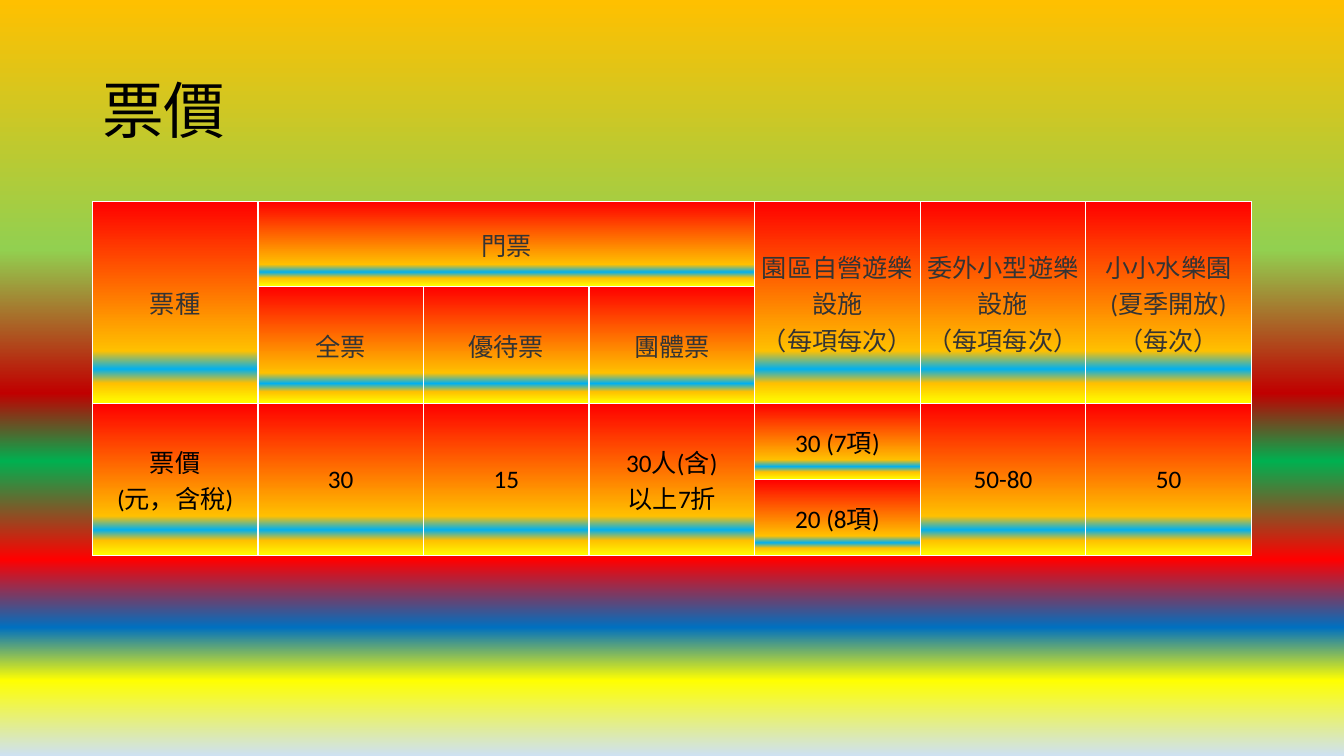
from pptx import Presentation
from pptx.dml.color import RGBColor
from pptx.enum.text import MSO_ANCHOR as Anchor, PP_ALIGN as Align
from pptx.oxml import parse_xml
from pptx.oxml.ns import nsdecls, qn
from pptx.util import Pt

BACKDROP = [(0, "FFC000"), (33, "92D050"), (52, "C00000"), (61, "00B050"),
            (74, "FF0000"), (83, "0070C0"), (90, "FFFF00"), (100, "CEE1F2")]
CELL_STOPS = [(0, "FF0000"), (74, "FFC000"), (83, "00B0F0"),
              (90, "FFC000"), (100, "FFFF00")]
HEADER_INK, PRICE_INK, GRID = "343434", "000000", "FFFFFF"
TABLE_WIDTH, COLUMNS = 828, 7
ROW_HEIGHTS = [60.7, 83.5, 54.4, 54.4]
TICKETS = [
    (0, 0, 2, 1, "票種"),
    (0, 1, 1, 3, "門票"),
    (0, 4, 2, 1, "園區自營遊樂設施\v（每項每次）"),
    (0, 5, 2, 1, "委外小型遊樂設施\v（每項每次）"),
    (0, 6, 2, 1, "小小水樂園\v(夏季開放)\v（每次）"),
    (1, 1, 1, 1, "全票"),
    (1, 2, 1, 1, "優待票"),
    (1, 3, 1, 1, "團體票"),
    (2, 0, 2, 1, "票價\v(元，含稅)"),
    (2, 1, 2, 1, "30"),
    (2, 2, 2, 1, "15"),
    (2, 3, 2, 1, "30人(含)\v以上7折"),
    (2, 4, 1, 1, "30 (7項)"),
    (3, 4, 1, 1, "20 (8項)"),
    (2, 5, 2, 1, "50-80"),
    (2, 6, 2, 1, "50"),
]


def color(value):
    """Turn a hex string into a colour."""
    return RGBColor.from_string(value)


def fill_gradient(fill, element, stops):
    """Fill from top to bottom through the given stops."""
    fill.gradient()
    fill.gradient_angle = 270
    stop_list = next(element.iter(qn("a:gsLst")))
    for stop in list(stop_list):
        stop_list.remove(stop)
    for percent, value in stops:
        stop_list.append(parse_xml(
            f'<a:gs {nsdecls("a")} pos="{percent * 1000}">'
            f'<a:srgbClr val="{value}"/></a:gs>'))


def format_text(frame, size, ink):
    """Style every run of a text frame."""
    for para in frame.paragraphs:
        for span in para.runs:
            span.font.name = "Calibri"
            span.font.size = Pt(size)
            span.font.bold = False
            span.font.color.rgb = color(ink)


def add_title(page, text):
    """Place the slide heading."""
    box = page.shapes.add_textbox(Pt(66), Pt(28.75), Pt(828), Pt(104.4))
    frame = box.text_frame
    frame.word_wrap = True
    frame.vertical_anchor = Anchor.MIDDLE
    frame.text = text
    frame.paragraphs[0].line_spacing = 0.9
    format_text(frame, 44, PRICE_INK)


def style_cell(cell):
    """Give a cell its border lines, gradient and margins."""
    properties = cell._tc.get_or_add_tcPr()
    for side in "LRTB":
        properties.append(parse_xml(
            f'<a:ln{side} {nsdecls("a")} w="{Pt(1)}"><a:solidFill>'
            f'<a:srgbClr val="{GRID}"/></a:solidFill></a:ln{side}>'))
    fill_gradient(cell.fill, properties, CELL_STOPS)
    cell.margin_left = cell.margin_right = Pt(2)
    cell.margin_top = cell.margin_bottom = Pt(2)
    cell.vertical_anchor = Anchor.MIDDLE


def add_ticket_table(page):
    """Build the ticket price table."""
    frame = page.shapes.add_table(
        len(ROW_HEIGHTS), COLUMNS, Pt(66), Pt(144),
        Pt(TABLE_WIDTH), Pt(sum(ROW_HEIGHTS)))
    table = frame.table
    table.first_row = table.horz_banding = False
    for column in table.columns:
        column.width = Pt(TABLE_WIDTH / COLUMNS)
    for row, height in zip(table.rows, ROW_HEIGHTS):
        row.height = Pt(height)
    for cell in table.iter_cells():
        style_cell(cell)
    for row, column, height, width, text in TICKETS:
        cell = table.cell(row, column)
        if height * width > 1:
            cell.merge(table.cell(row + height - 1, column + width - 1))
        para = cell.text_frame.paragraphs[0]
        para.text = text
        para.alignment = Align.CENTER
        format_text(cell.text_frame, 18, HEADER_INK if row < 2 else PRICE_INK)


def main():
    """Create the ticket price slide."""
    deck = Presentation()
    deck.slide_width, deck.slide_height = Pt(960), Pt(540)
    page = deck.slides.add_slide(deck.slide_layouts[6])
    fill_gradient(page.background.fill, page._element, BACKDROP)
    add_title(page, "票價")
    add_ticket_table(page)
    deck.save("out.pptx")


if __name__ == "__main__":
    main()
